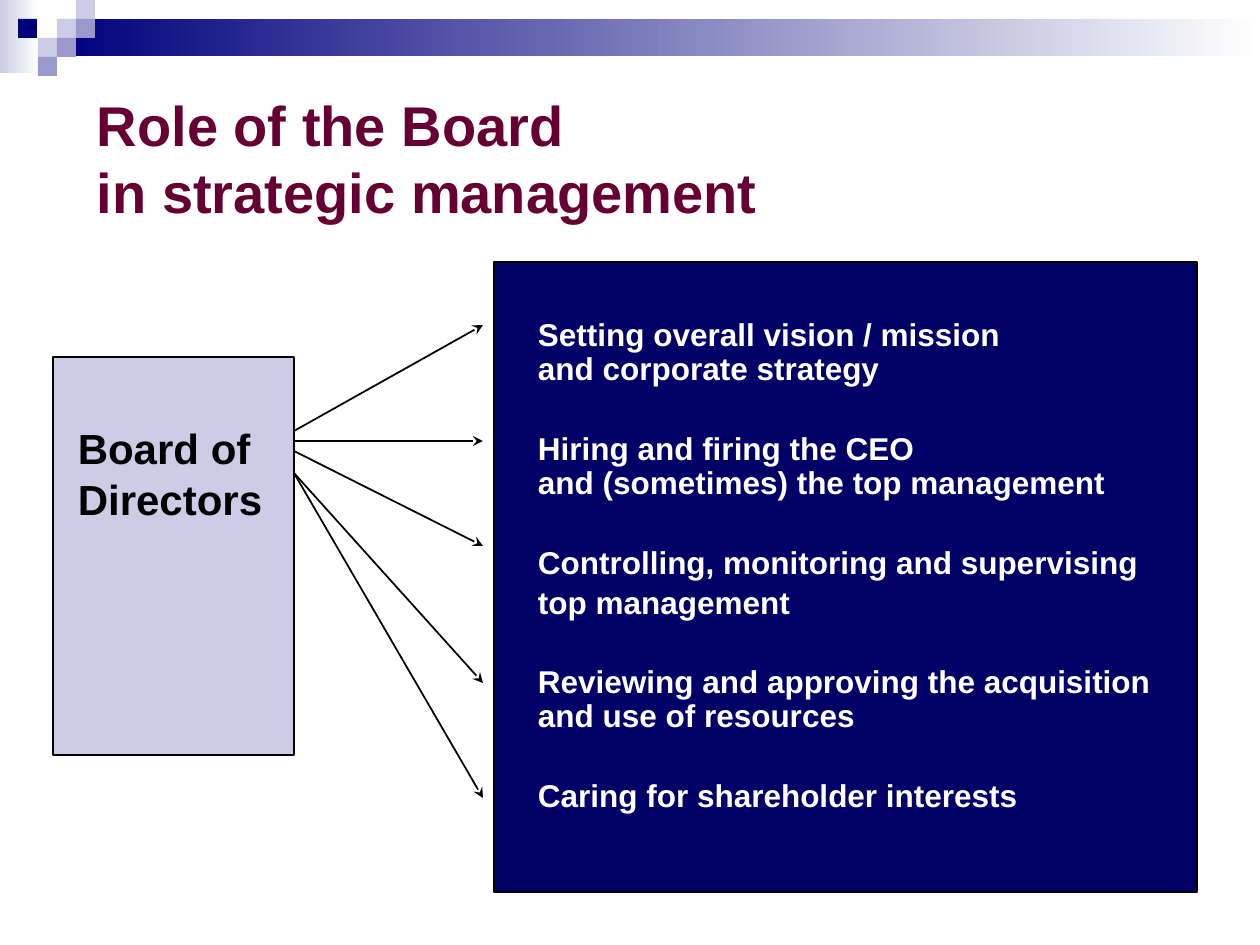
from lxml import etree
from pptx import Presentation
from pptx.dml.color import RGBColor
from pptx.enum.shapes import MSO_CONNECTOR, MSO_SHAPE
from pptx.enum.text import MSO_ANCHOR, MSO_AUTO_SIZE, PP_ALIGN
from pptx.oxml.ns import qn
from pptx.util import Pt

RECT = MSO_SHAPE.RECTANGLE
STRAIGHT = MSO_CONNECTOR.STRAIGHT
MIDDLE = MSO_ANCHOR.MIDDLE
LEFT, CENTER = PP_ALIGN.LEFT, PP_ALIGN.CENTER
NO_FIT = MSO_AUTO_SIZE.NONE

EMU_PER_PX = 914400 / 126
NAVY, LILAC, VIOLET = "00007D", "CCCCE6", "9999CC"
WHITE, BLACK, PLUM, PANEL = "FFFFFF", "000000", "660033", "000066"
TITLE = ["Role of the Board", "in strategic management"]
# Lines of each paragraph, and the space before it in points
DUTIES = [
    (["Setting overall vision / mission", "and corporate strategy"], 3.6),
    (["Hiring and firing the CEO", "and (sometimes) the top management"], 26),
    (["Controlling, monitoring and supervising"], 26),
    (["top management"], 3.6),
    (["Reviewing and approving the acquisition and use of resources"], 26),
    (["Caring for shareholder interests"], 26),
]
# Start and end height of each arrow
ARROWS = [(431, 325), (441, 441), (451, 546), (473, 683), (473, 798)]


def px(n):
    return round(n * EMU_PER_PX)


def color(hex_string):
    return RGBColor.from_string(hex_string)


def place(shape, x, y, w, h):
    shape.left, shape.top, shape.width, shape.height = map(px, (x, y, w, h))


def add_rect(s, x, y, w, h, fill, line=None, fade=None):
    """Add a rectangle; fade is the colour its fill runs to on the right."""
    sp = s.shapes.add_shape(RECT, px(x), px(y), px(w), px(h))
    sp.shadow.inherit = False
    if fade:
        sp.fill.gradient()
        sp.fill.gradient_angle = 0
        for stop, c in zip(sp.fill.gradient_stops, (fill, fade)):
            stop.color.rgb = color(c)
    else:
        sp.fill.solid()
        sp.fill.fore_color.rgb = color(fill)
    if line:
        sp.line.color.rgb = color(line)
        sp.line.width = Pt(1)
    else:
        sp.line.fill.background()
    return sp


def set_frame(tf, wrap=True, bottom=6):
    tf.auto_size = NO_FIT
    tf.word_wrap = wrap
    tf.vertical_anchor = MIDDLE
    tf.margin_left = tf.margin_right = px(13)
    tf.margin_top, tf.margin_bottom = px(6), px(bottom)


def add_lines(p, lines, size, hex_string, align=LEFT):
    """Fill a paragraph with bold runs parted by line breaks."""
    p.alignment = align
    for i, text in enumerate(lines):
        if i:
            p.add_line_break()
        r = p.add_run()
        r.text = text
        r.font.name, r.font.size, r.font.bold = "Arial", Pt(size), True
        r.font.color.rgb = color(hex_string)


def add_header(s, x, y, w):
    add_rect(s, x, y, 39, 73, LILAC, fade=WHITE)
    add_rect(s, x + 57, y + 19, w - 57, 37, NAVY, fade=WHITE)
    squares = [(57, 19, LILAC), (76, 0, LILAC), (76, 19, VIOLET), (38, 38, LILAC),
               (18, 19, NAVY), (57, 38, VIOLET), (38, 57, VIOLET)]
    for dx, dy, fill in squares:
        add_rect(s, x + dx, y + dy, 19, 19, fill)


def add_title(s, x, y, w, h):
    title = s.shapes.title
    place(title, x, y, w, h)
    set_frame(title.text_frame)
    add_lines(title.text_frame.paragraphs[0], TITLE, 32, PLUM)


def add_duties(s, x, y, w, h):
    add_rect(s, x, y, w, h, PANEL, BLACK)
    body = s.placeholders[1]
    place(body, x + 31, y - 2, w - 48, h + 24)
    body.element.getparent().append(body.element)  # in front of the panel
    tf = body.text_frame
    set_frame(tf, bottom=46)
    for i, (lines, before) in enumerate(DUTIES):
        p = tf.add_paragraph() if i else tf.paragraphs[0]
        add_lines(p, lines, 18, WHITE)
        p.line_spacing = 0.9
        p.space_before = Pt(before)
        pPr = p._p.get_or_add_pPr()
        pPr.set("marL", "0")
        pPr.set("indent", "0")
        etree.SubElement(pPr, qn("a:buNone"))


def add_board(s, x, y, w, h):
    add_rect(s, x, y, w, h, LILAC, BLACK)
    tf = s.shapes.add_textbox(px(x + 10), px(y - 77), px(w - 27), px(h - 12)).text_frame
    set_frame(tf, wrap=False)
    add_lines(tf.paragraphs[0], ["Board of "], 24, BLACK, CENTER)
    add_lines(tf.add_paragraph(), ["Directors"], 24, BLACK, CENTER)


def add_arrows(s, x, w):
    for y1, y2 in ARROWS:
        cxn = s.shapes.add_connector(STRAIGHT, px(x), px(y1), px(x + w), px(y2))
        cxn.line.color.rgb = color(BLACK)
        cxn.line.width = Pt(1)
        etree.SubElement(cxn.line._get_or_add_ln(), qn("a:tailEnd"), type="stealth")
        etree.SubElement(cxn.element.spPr, qn("a:effectLst"))


def main():
    prs = Presentation()
    prs.slide_width, prs.slide_height = px(1260), px(945)
    s = prs.slides.add_slide(prs.slide_layouts[1])
    add_header(s, 0, 0, 1260)
    add_duties(s, 494, 262, 703, 630)
    add_board(s, 53, 357, 241, 398)
    add_arrows(s, 294, 189)
    add_title(s, 84, 63, 1113, 189)
    prs.save("out.pptx")


if __name__ == "__main__":
    main()
